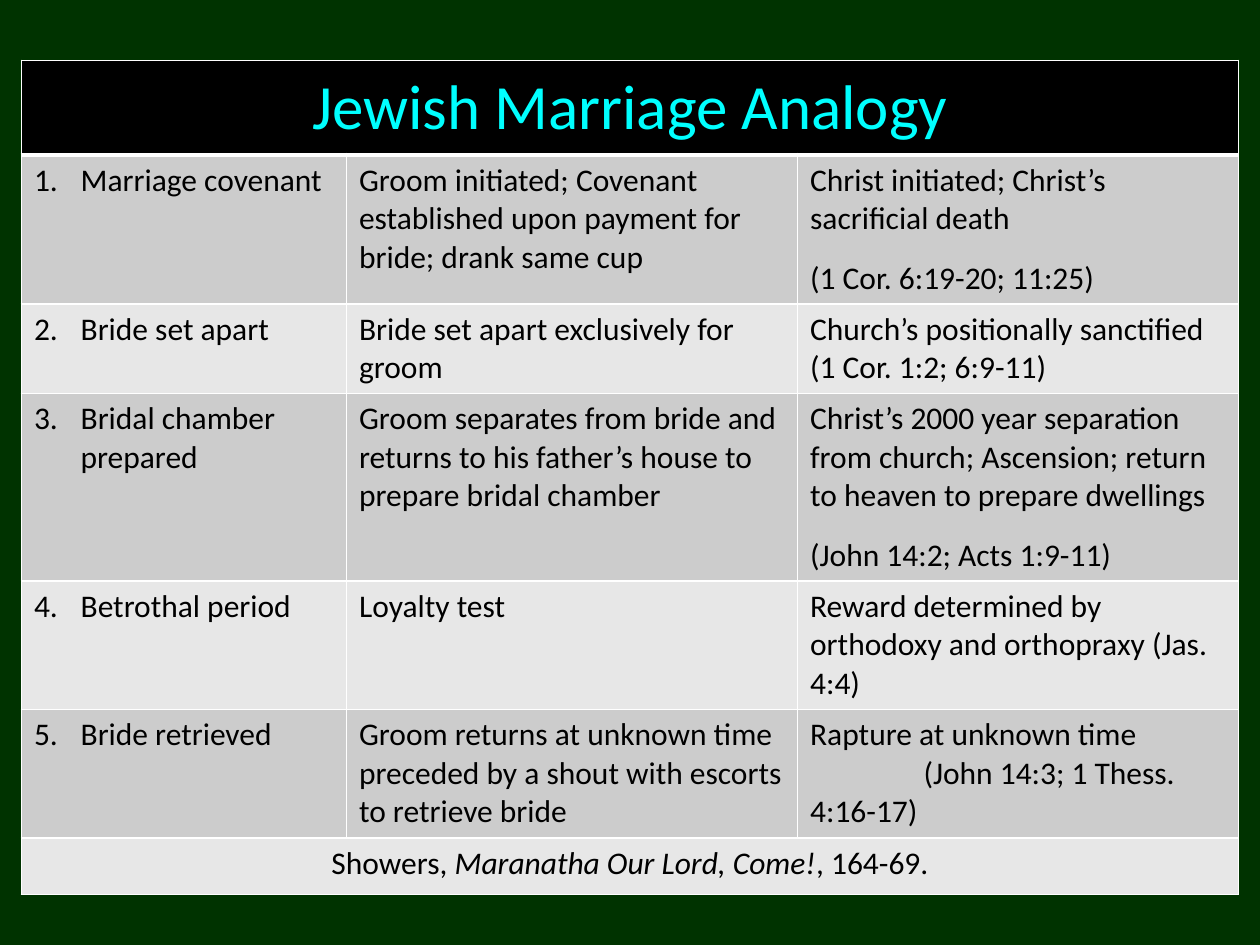
"""Build the Jewish Marriage Analogy slide: one comparison table on dark green."""
from dataclasses import dataclass

from lxml import etree
from pptx import Presentation
from pptx.dml.color import RGBColor
from pptx.enum import text
from pptx.oxml import ns
from pptx.util import Inches, Pt

GREEN = RGBColor(0x00, 0x33, 0x00)
BLACK = RGBColor(0x00, 0x00, 0x00)
CYAN = RGBColor(0x00, 0xFF, 0xFF)
WHITE = RGBColor(0xFF, 0xFF, 0xFF)
BANDS = (RGBColor(0xCC, 0xCC, 0xCC), RGBColor(0xE7, 0xE7, 0xE7))
FONT = "Calibri"
COLUMN_WIDTHS = (2.58, 3.58, 3.5)
HEADING_HEIGHT = 0.75
SOURCE_HEIGHT = 0.45


@dataclass(frozen=True)
class Stage:
    """One stage of the marriage and its parallel in the church."""
    name: str
    custom: str
    parallel: str
    height: float


STAGES = (
    Stage("Marriage covenant",
          "Groom initiated; Covenant established upon payment for bride; drank same cup",
          "Christ initiated; Christ’s sacrificial death\n(1 Cor. 6:19-20; 11:25)", 1.18),
    Stage("Bride set apart", "Bride set apart exclusively for groom",
          "Church’s positionally sanctified (1 Cor. 1:2; 6:9-11)", 0.71),
    Stage("Bridal chamber prepared",
          "Groom separates from bride and returns to his father’s house to prepare bridal chamber",
          "Christ’s 2000 year separation from church; Ascension; return to heaven "
          "to prepare dwellings\n(John 14:2; Acts 1:9-11)", 1.48),
    Stage("Betrothal period", "Loyalty test",
          "Reward determined by orthodoxy and orthopraxy (Jas. 4:4)", 1.02),
    Stage("Bride retrieved",
          "Groom returns at unknown time preceded by a shout with escorts to retrieve bride",
          "Rapture at unknown time\v\t(John 14:3; 1 Thess. 4:16-17)", 1.02),
)


def style_cell(cell, fill: RGBColor, bottom: float = 1) -> None:
    """Give a cell white borders and a solid fill."""
    properties = cell._tc.get_or_add_tcPr()
    for side, width in (("L", 1), ("R", 1), ("T", 1), ("B", bottom)):
        line = etree.SubElement(properties, ns.qn(f"a:ln{side}"), w=str(Pt(width)))
        solid = etree.SubElement(line, ns.qn("a:solidFill"))
        etree.SubElement(solid, ns.qn("a:srgbClr"), val=str(WHITE))
    cell.fill.solid()
    cell.fill.fore_color.rgb = fill


def format_run(run, size: float, color: RGBColor) -> None:
    """Set the font of one run."""
    run.font.name = FONT
    run.font.size = Pt(size)
    run.font.bold = False
    run.font.color.rgb = color


def write(cell, content: str, size: float = 18, color: RGBColor = BLACK,
          before: float = 6, after: float = 6, centered: bool = False) -> None:
    """Write text into a cell and format every paragraph."""
    cell.text_frame.text = content
    for paragraph in cell.text_frame.paragraphs:
        paragraph.space_before = Pt(before)
        paragraph.space_after = Pt(after)
        if centered:
            paragraph.alignment = text.PP_ALIGN.CENTER
        for run in paragraph.runs:
            format_run(run, size, color)
        if "\t" in paragraph.text:
            tabs = etree.SubElement(paragraph._p.get_or_add_pPr(), ns.qn("a:tabLst"))
            etree.SubElement(tabs, ns.qn("a:tab"), pos=str(Inches(0.9)), algn="l")


def number(cell, start: int) -> None:
    """Turn a cell's paragraph into a numbered item."""
    properties = cell.text_frame.paragraphs[0]._p.get_or_add_pPr()
    properties.set("marL", str(Inches(0.37)))
    properties.set("indent", str(-Inches(0.37)))
    etree.SubElement(properties, ns.qn("a:buFont"), typeface="+mj-lt")
    etree.SubElement(properties, ns.qn("a:buAutoNum"), type="arabicPeriod", startAt=str(start))


def write_source(cell) -> None:
    """Write the citation with its book title in italics."""
    write(cell, "Showers, ", centered=True)
    citation = cell.text_frame.paragraphs[0]
    for part, italic in (("Maranatha Our Lord, Come!", True), (", 164-69.", False)):
        run = citation.add_run()
        run.text = part
        format_run(run, 18, BLACK)
        run.font.italic = italic


def build_table(slide) -> None:
    """Add the analogy table with heading, stages and source."""
    heights = (HEADING_HEIGHT, *(stage.height for stage in STAGES), SOURCE_HEIGHT)
    analogy = slide.shapes.add_table(
        len(heights), len(COLUMN_WIDTHS), Inches(0.17), Inches(0.48),
        Inches(sum(COLUMN_WIDTHS)), Inches(sum(heights))).table
    analogy.first_row = analogy.horz_banding = False
    for column, width in zip(analogy.columns, COLUMN_WIDTHS):
        column.width = Inches(width)
    for index, (row, height) in enumerate(zip(analogy.rows, heights)):
        row.height = Inches(height)
        for cell in row.cells:
            if index == 0:
                style_cell(cell, BLACK, bottom=3)
            else:
                style_cell(cell, BANDS[(index - 1) % 2])
    last = len(heights) - 1
    for index in (0, last):
        analogy.cell(index, 0).merge(analogy.cell(index, len(COLUMN_WIDTHS) - 1))

    heading = analogy.cell(0, 0)
    heading.vertical_anchor = text.MSO_ANCHOR.MIDDLE
    write(heading, "Jewish Marriage Analogy", 36, CYAN, before=7.2, after=0, centered=True)
    for index, stage in enumerate(STAGES, start=1):
        for column, content in enumerate((stage.name, stage.custom, stage.parallel)):
            write(analogy.cell(index, column), content)
        number(analogy.cell(index, 0), index)
    write_source(analogy.cell(last, 0))


def main() -> None:
    """Create and save the presentation."""
    deck = Presentation()
    deck.slide_width, deck.slide_height = Inches(10), Inches(7.5)
    slide = deck.slides.add_slide(deck.slide_layouts[6])
    slide.background.fill.solid()
    slide.background.fill.fore_color.rgb = GREEN
    build_table(slide)
    deck.save("out.pptx")


if __name__ == "__main__":
    main()
